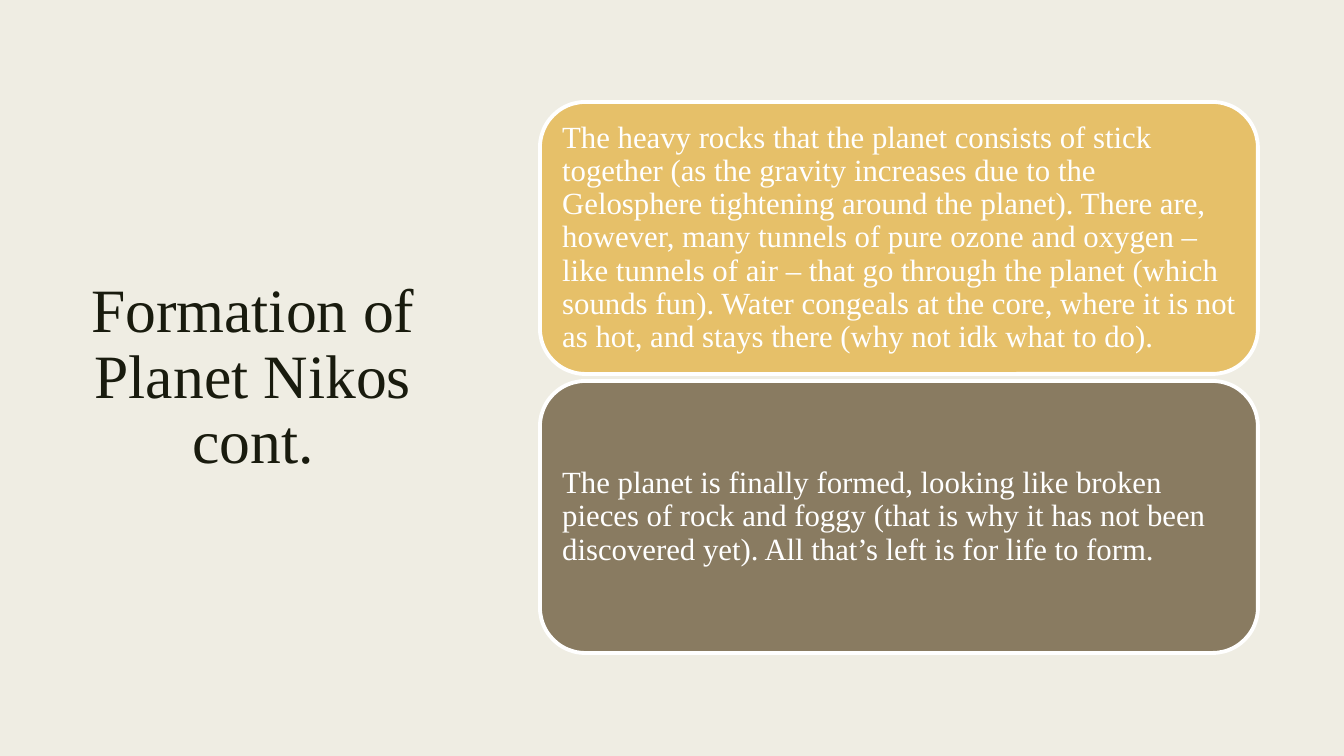
from pptx import Presentation
from pptx import util as u
from pptx.dml.color import RGBColor
from pptx.enum import shapes, text

PX = 9071.43  # EMU per px, at 100.8 px to the inch
CREAM = RGBColor(0xEF, 0xED, 0xE3)
INK = RGBColor(0x19, 0x1B, 0x0E)
GOLD = RGBColor(0xE6, 0xC0, 0x69)
BROWN = RGBColor(0x89, 0x7B, 0x61)
WHITE = RGBColor(0xFF, 0xFF, 0xFF)


def px(length):
    return u.Emu(round(length * PX))


def write(shape, words, size, color, alignment, spacing, inset):
    frame = shape.text_frame
    frame.text = words
    frame_format = {
        "word_wrap": True,
        "auto_size": text.MSO_AUTO_SIZE.NONE,
        "vertical_anchor": text.MSO_ANCHOR.MIDDLE,
        "margin_left": inset, "margin_right": inset,
        "margin_top": inset, "margin_bottom": inset,
    }
    for name, value in frame_format.items():
        setattr(frame, name, value)
    paragraph = frame.paragraphs[0]
    paragraph.alignment = alignment
    paragraph.line_spacing = spacing
    font = paragraph.runs[0].font
    font.name = "Times New Roman"
    font.size = u.Pt(size)
    font.color.rgb = color


presentation = Presentation()
presentation.slide_width, presentation.slide_height = px(1344), px(756)
slide = presentation.slides.add_slide(presentation.slide_layouts[5])
slide.background.fill.solid()
slide.background.fill.fore_color.rgb = CREAM

title = slide.shapes.title
title_place = {"left": 71, "top": 71, "width": 364, "height": 615}
for name, value in title_place.items():
    setattr(title, name, px(value))
write(title, "Formation of Planet Nikos cont.", 44, INK,
      text.PP_ALIGN.CENTER, 0.89, px(9))

CARD_LEFT, CARD_TOP, CARD_WIDTH, CARD_HEIGHT, CARD_GAP = 540, 102, 718, 272, 7
cards = [
    (GOLD, "The heavy rocks that the planet consists of stick together (as the "
           "gravity increases due to the Gelosphere tightening around the planet). "
           "There are, however, many tunnels of pure ozone and oxygen – like "
           "tunnels of air – that go through the planet (which sounds fun). Water "
           "congeals at the core, where it is not as hot, and stays there (why not "
           "idk what to do)."),
    (BROWN, "The planet is finally formed, looking like broken pieces of rock and "
            "foggy (that is why it has not been discovered yet). All that’s left "
            "is for life to form."),
]
for index, (color, words) in enumerate(cards):
    top = CARD_TOP + index * (CARD_HEIGHT + CARD_GAP)
    card = slide.shapes.add_shape(
        shapes.MSO_SHAPE.ROUNDED_RECTANGLE,
        px(CARD_LEFT), px(top), px(CARD_WIDTH), px(CARD_HEIGHT))
    card.shadow.inherit = False
    card.fill.solid()
    card.fill.fore_color.rgb = color
    card.line.color.rgb = WHITE
    card.line.width = u.Pt(2.75)
    write(card, words, 22, WHITE, text.PP_ALIGN.LEFT, 0.9, px(9))

presentation.save("out.pptx")
